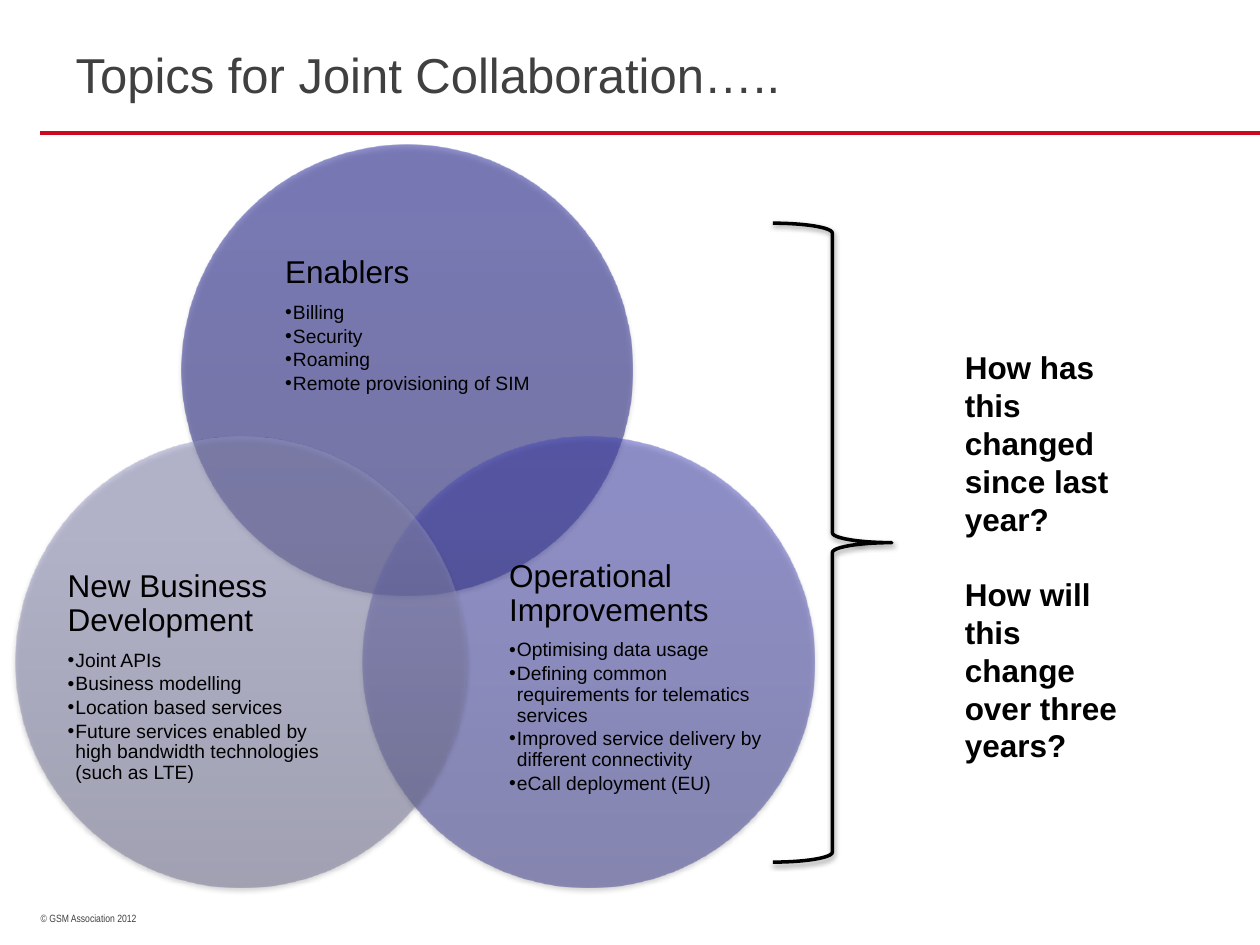
from dataclasses import dataclass

import lxml.etree
import pptx
import pptx.dml.color
import pptx.enum.shapes
import pptx.enum.text
import pptx.oxml
import pptx.oxml.ns
import pptx.util
from pptx.util import Cm, Pt

DIAMETER = 9.09
BLACK = "000000"
GREY = "404040"
RED = "CD0921"


@dataclass(frozen=True)
class Box:
    left: float
    top: float
    width: float
    height: float

    def lengths(self) -> tuple:
        return Cm(self.left), Cm(self.top), Cm(self.width), Cm(self.height)


@dataclass(frozen=True)
class Topic:
    heading: str
    items: tuple[str, ...]
    circle_left: float
    circle_top: float
    text_box: Box
    gradient: tuple[str, str, str]


TOPICS = (
    Topic(
        "Enablers",
        ("Billing", "Security", "Roaming", "Remote provisioning of SIM"),
        3.66, 2.91, Box(4.88, 4.52, 6.68, 4.09),
        ("181872", "1F1F94", "1D1D97"),
    ),
    Topic(
        "Operational Improvements",
        (
            "Optimising data usage",
            "Defining common requirements for telematics services",
            "Improved service delivery by different connectivity",
            "eCall deployment (EU)",
        ),
        7.32, 8.8, Box(10.08, 11.15, 5.46, 5),
        ("39398E", "4A4AB8", "4848BB"),
    ),
    Topic(
        "New Business Development",
        (
            "Joint APIs",
            "Business modelling",
            "Location based services",
            "Future services enabled by high bandwidth technologies (such as LTE)",
        ),
        0.31, 8.8, Box(1.17, 11.15, 5.46, 5),
        ("707093", "9292BF", "9191C0"),
    ),
)
QUESTIONS = (
    "How has this changed since last year?",
    "How will this change over three years?",
)


def color(value: str) -> pptx.dml.color.RGBColor:
    return pptx.dml.color.RGBColor.from_string(value)


def format_paragraph(paragraph, size: float, value: str = BLACK, name: str = "Arial", bold: bool = False) -> None:
    paragraph.font.size = Pt(size)
    paragraph.font.name = name
    paragraph.font.bold = bold
    paragraph.font.color.rgb = color(value)


def add_text_frame(slide, box: Box):
    frame = slide.shapes.add_textbox(*box.lengths()).text_frame
    frame.word_wrap = True
    return frame


def next_paragraph(frame, index: int):
    return frame.add_paragraph() if index else frame.paragraphs[0]


def add_shadow(shape, opacity: int, distance: float) -> None:
    shape.shadow.inherit = False
    effects = shape.element.spPr.find(pptx.oxml.ns.qn("a:effectLst"))
    effects.append(pptx.oxml.parse_xml(
        f'<a:outerShdw {pptx.oxml.ns.nsdecls("a")} blurRad="{Pt(3.1)}" dist="{Pt(distance)}" '
        f'dir="5400000" rotWithShape="0"><a:srgbClr val="{BLACK}">'
        f'<a:alpha val="{opacity * 1000}"/></a:srgbClr></a:outerShdw>'
    ))


def fill_gradient(shape, colors: tuple[str, str, str]) -> None:
    shape.fill.gradient()
    gradient = shape.element.spPr.find(pptx.oxml.ns.qn("a:gradFill"))
    stops = "".join(
        f'<a:gs pos="{position * 1000}"><a:srgbClr val="{value}"><a:alpha val="50000"/></a:srgbClr></a:gs>'
        for position, value in zip((0, 80, 100), colors)
    )
    replacement = pptx.oxml.parse_xml(
        f'<a:gradFill {pptx.oxml.ns.nsdecls("a")} rotWithShape="1"><a:gsLst>{stops}</a:gsLst>'
        '<a:lin ang="16200000" scaled="0"/></a:gradFill>'
    )
    gradient.getparent().replace(gradient, replacement)


def make_bullet(paragraph) -> None:
    paragraph.level = 1
    properties = paragraph._p.get_or_add_pPr()
    properties.set("marL", str(Pt(4.5)))
    properties.set("indent", str(-Pt(4.5)))
    bullet_font = lxml.etree.SubElement(properties, pptx.oxml.ns.qn("a:buFont"))
    bullet_font.set("typeface", "Arial")
    bullet = lxml.etree.SubElement(properties, pptx.oxml.ns.qn("a:buChar"))
    bullet.set("char", "•")


def draw_topic(slide, topic: Topic) -> None:
    circle_box = Box(topic.circle_left, topic.circle_top, DIAMETER, DIAMETER)
    circle = slide.shapes.add_shape(pptx.enum.shapes.MSO_SHAPE.OVAL, *circle_box.lengths())
    fill_gradient(circle, topic.gradient)
    circle.line.fill.background()
    add_shadow(circle, 35, 1.8)

    frame = add_text_frame(slide, topic.text_box)
    frame.margin_left = frame.margin_top = frame.margin_right = frame.margin_bottom = 0
    frame.vertical_anchor = pptx.enum.text.MSO_ANCHOR.MIDDLE
    frame._txBody.find(pptx.oxml.ns.qn("a:bodyPr")).set("anchorCtr", "1")
    for index, text in enumerate((topic.heading, *topic.items)):
        paragraph = next_paragraph(frame, index)
        paragraph.text = text
        paragraph.line_spacing = 0.9
        paragraph.space_after = Pt(1.6 if index else 7)
        if index:
            make_bullet(paragraph)
        format_paragraph(paragraph, 11 if index else 18)


def draw_title(slide, text: str) -> None:
    title = slide.shapes.title
    title.left, title.top, title.width, title.height = Box(1.27, 0.76, 22.86, 1.93).lengths()
    frame = title.text_frame
    frame.text = text
    frame.auto_size = pptx.enum.text.MSO_AUTO_SIZE.NONE
    frame.vertical_anchor = pptx.enum.text.MSO_ANCHOR.TOP
    frame.margin_top = Cm(0.13)
    frame.paragraphs[0].alignment = pptx.enum.text.PP_ALIGN.LEFT
    format_paragraph(frame.paragraphs[0], 28, GREY)


def draw_rule(slide) -> None:
    rule = slide.shapes.add_connector(
        pptx.enum.shapes.MSO_CONNECTOR.STRAIGHT, Cm(0.8), Cm(2.68), Cm(25.4), Cm(2.68)
    )
    rule.line.color.rgb = color(RED)
    rule.line.width = Pt(2.25)
    lxml.etree.SubElement(rule.element.spPr, pptx.oxml.ns.qn("a:effectLst"))


def draw_copyright(slide) -> None:
    frame = add_text_frame(slide, Box(0.79, 18.26, 3.96, 0.51))
    frame.margin_left = Cm(0.03)
    frame.text = "© GSM Association 2012"
    format_paragraph(frame.paragraphs[0], 6, GREY, "Arial Narrow")


def draw_brace(slide) -> None:
    brace = slide.shapes.add_shape(
        pptx.enum.shapes.MSO_SHAPE.RIGHT_BRACE, *Box(15.58, 4.5, 2.4, 12.88).lengths()
    )
    brace.fill.background()
    brace.line.color.rgb = color(BLACK)
    brace.line.width = Pt(2)
    add_shadow(brace, 38, 1.6)


def draw_questions(slide) -> None:
    frame = add_text_frame(slide, Box(19.2, 6.9, 3.94, 8.71))
    for index, question in enumerate(QUESTIONS):
        paragraph = next_paragraph(frame, index)
        paragraph.text = question
        if index:
            paragraph.space_before = Pt(21.6)
        format_paragraph(paragraph, 18, bold=True)


def main() -> None:
    presentation = pptx.Presentation()
    presentation.slide_width, presentation.slide_height = Cm(25.4), Cm(19.05)
    slide = presentation.slides.add_slide(presentation.slide_layouts[5])
    draw_copyright(slide)
    draw_rule(slide)
    draw_title(slide, "Topics for Joint Collaboration…..")
    for topic in TOPICS:
        draw_topic(slide, topic)
    draw_brace(slide)
    draw_questions(slide)
    presentation.save("out.pptx")


if __name__ == "__main__":
    main()
